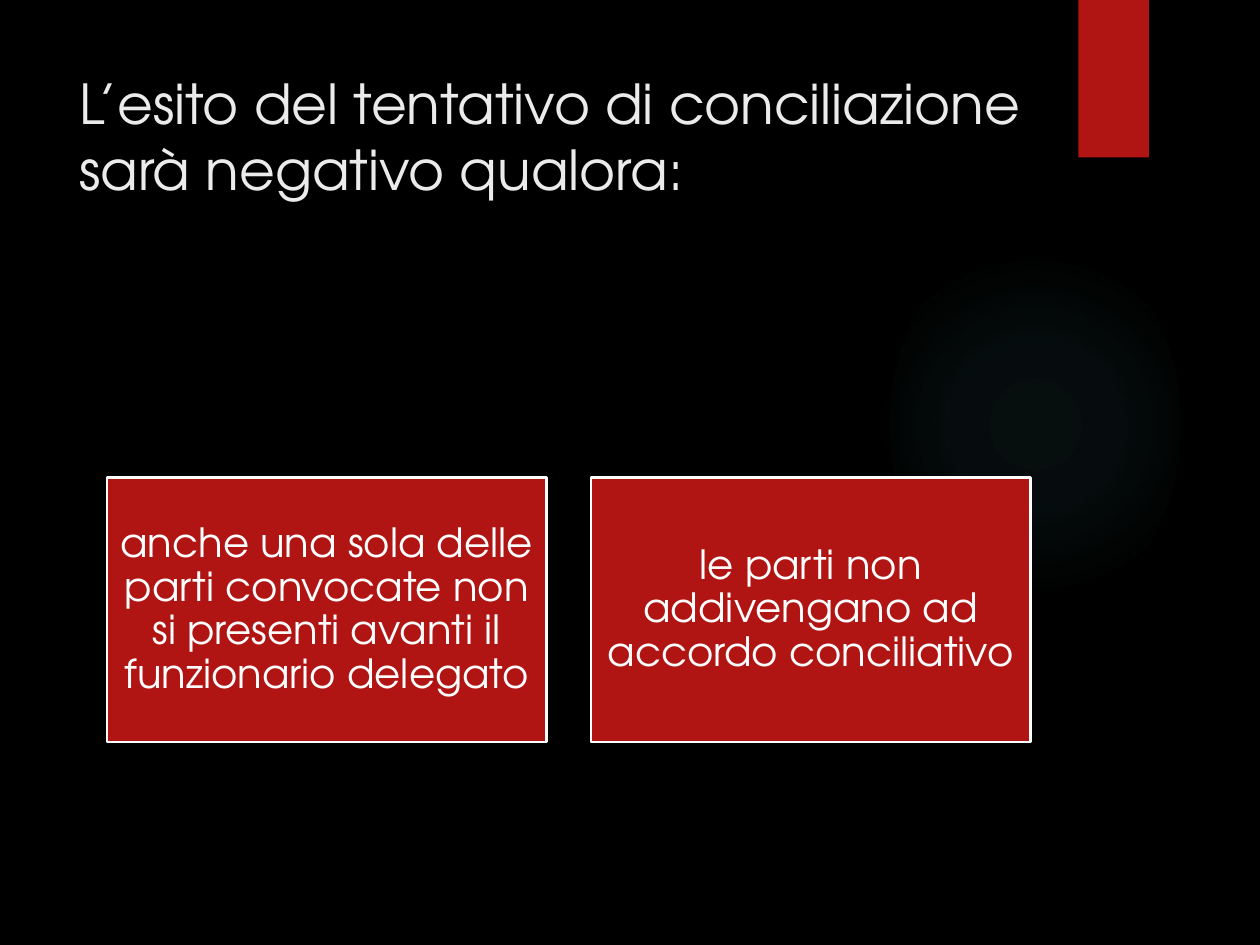
from lxml import etree
from pptx import Presentation
from pptx.dml.color import RGBColor
from pptx.enum.shapes import MSO_SHAPE
from pptx.enum.text import MSO_ANCHOR, PP_ALIGN
from pptx.oxml.ns import qn
from pptx.util import Inches, Pt

RECT, OVAL = MSO_SHAPE.RECTANGLE, MSO_SHAPE.OVAL
TOP, MIDDLE = MSO_ANCHOR.TOP, MSO_ANCHOR.MIDDLE
LEFT, CENTER = PP_ALIGN.LEFT, PP_ALIGN.CENTER

TITLE = "L’esito del tentativo di conciliazione sarà negativo qualora:"
CASES = [
    "anche una sola delle parti convocate non si presenti avanti il funzionario delegato",
    "le parti non addivengano ad accordo conciliativo",
]
FONT = "TeX Gyre Adventor"
BLACK, RED, WHITE, PALE, TEAL = "000000", "B01513", "FFFFFF", "EBEBEB", "50B9C1"
GLOW_STOPS = [(0, 7), (36, 6), (69, 0)]
TITLE_BOX = (0.53, 0.5, 7.71, 1.53)
RIBBON_BOX = (8.56, 0, 0.56, 1.25)
GLOW_BOX = (7.06, 1.83, 2.31, 3.08)
CARD_LEFT, CARD_TOP, CARD_W, CARD_H, CARD_GAP = 0.85, 3.79, 3.49, 2.1, 0.35


def rgb(value):
    return RGBColor.from_string(value)


def add_block(s, kind, box, fill=None):
    sp = s.shapes.add_shape(kind, *map(Inches, box))
    sp.shadow.inherit = False
    sp.line.fill.background()
    if fill:
        sp.fill.solid()
        sp.fill.fore_color.rgb = rgb(fill)
    return sp


def add_glow(s):
    sp = add_block(s, OVAL, GLOW_BOX)
    sp.fill.background()
    grad = etree.Element(qn("a:gradFill"), rotWithShape="1")
    stops = etree.SubElement(grad, qn("a:gsLst"))
    for pos, alpha in GLOW_STOPS:
        stop = etree.SubElement(stops, qn("a:gs"), pos=str(pos * 1000))
        color = etree.SubElement(stop, qn("a:srgbClr"), val=TEAL)
        etree.SubElement(color, qn("a:alpha"), val=str(alpha * 1000))
    route = etree.SubElement(grad, qn("a:path"), path="circle")
    etree.SubElement(route, qn("a:fillToRect"), dict.fromkeys("ltrb", "50000"))
    props = sp.element.spPr
    props.replace(props.find(qn("a:noFill")), grad)


def write(sp, text, size, color, frame, para):
    tf = sp.text_frame
    p = tf.paragraphs[0]
    r = p.add_run()
    r.text = text
    r.font.color.rgb = rgb(color)
    font = {"name": FONT, "size": Pt(size)}
    for target, values in ((tf, frame), (p, para), (r.font, font)):
        for name, value in values.items():
            setattr(target, name, value)


def add_card(s, column, text):
    x = CARD_LEFT + column * (CARD_W + CARD_GAP)
    sp = add_block(s, RECT, (x, CARD_TOP, CARD_W, CARD_H), RED)
    sp.line.color.rgb = rgb(WHITE)
    sp.line.width = Pt(1.5)
    frame = {f"margin_{side}": Inches(0.1) for side in ("left", "top", "right", "bottom")}
    frame |= {"word_wrap": True, "vertical_anchor": MIDDLE}
    write(sp, text, 23, WHITE, frame, {"alignment": CENTER, "line_spacing": 0.9})


def main():
    prs = Presentation()
    prs.slide_width, prs.slide_height = Inches(10), Inches(7.5)
    s = prs.slides.add_slide(prs.slide_layouts[6])
    s.background.fill.solid()
    s.background.fill.fore_color.rgb = rgb(BLACK)
    add_glow(s)
    add_block(s, RECT, RIBBON_BOX, RED)
    title = s.shapes.add_textbox(*map(Inches, TITLE_BOX))
    write(title, TITLE, 31.5, PALE,
          {"word_wrap": True, "vertical_anchor": TOP}, {"alignment": LEFT})
    for column, text in enumerate(CASES):
        add_card(s, column, text)
    prs.save("out.pptx")


if __name__ == "__main__":
    main()
